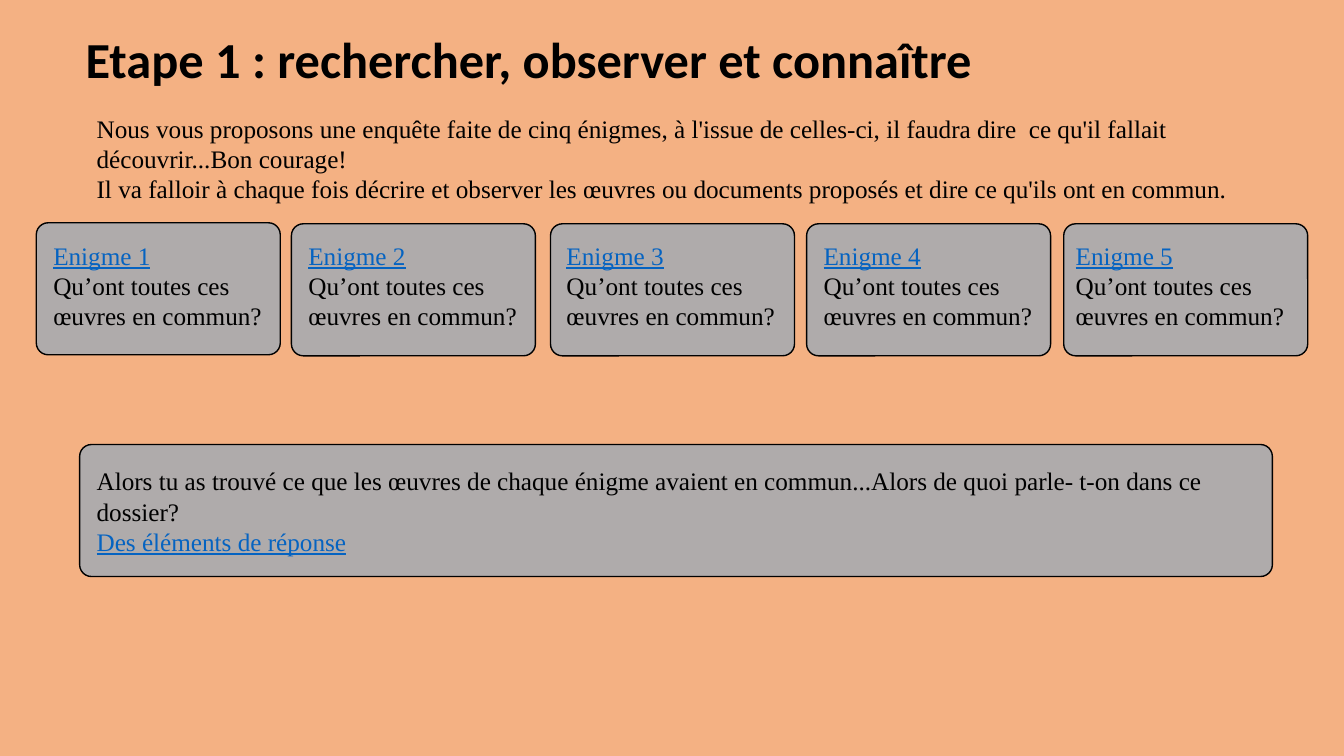
import pptx
import pptx.util
import pptx.dml.color
import pptx.enum.shapes
import pptx.enum.text

Inches = pptx.util.Inches
Pt = pptx.util.Pt


def color(code):
    return pptx.dml.color.RGBColor.from_string(code)


class Page:
    """Hold the style and the current slide, and add its elements."""

    ink = "000000"
    link = "0563C1"
    panel = "AFABAB"
    back = "F4B183"
    serif = "Times New Roman"
    sans = "Calibri"

    def __init__(self, deck):
        self.slide = deck.slides.add_slide(deck.slide_layouts[5])
        fill = self.slide.background.fill
        fill.solid()
        fill.fore_color.rgb = color(self.back)

    def run(self, para, text, size=18, face=serif, tint=ink, bold=False, under=False):
        run = para.add_run()
        run.text = text
        font = run.font
        font.name = face
        font.size = Pt(size)
        font.bold = bold
        font.underline = under
        font.color.rgb = color(tint)

    def title(self, text, left, top, width, height):
        shape = self.slide.shapes.title
        shape.left, shape.top = Inches(left), Inches(top)
        shape.width, shape.height = Inches(width), Inches(height)
        frame = shape.text_frame
        frame.word_wrap = True
        frame.auto_size = pptx.enum.text.MSO_AUTO_SIZE.NONE
        frame.vertical_anchor = pptx.enum.text.MSO_ANCHOR.MIDDLE
        para = frame.paragraphs[0]
        para.alignment = pptx.enum.text.PP_ALIGN.LEFT
        para.line_spacing = 0.9
        self.run(para, text, size=36, face=self.sans, bold=True)

    def card(self, left, top, width, height):
        shape = self.slide.shapes.add_shape(
            pptx.enum.shapes.MSO_SHAPE.ROUNDED_RECTANGLE,
            Inches(left), Inches(top), Inches(width), Inches(height))
        shape.adjustments[0] = 0.09
        shape.shadow.inherit = False
        shape.fill.solid()
        shape.fill.fore_color.rgb = color(self.panel)
        shape.line.color.rgb = color(self.ink)
        shape.line.width = Pt(1)

    def text(self, left, top, width, height):
        box = self.slide.shapes.add_textbox(
            Inches(left), Inches(top), Inches(width), Inches(height))
        frame = box.text_frame
        frame.word_wrap = True
        frame.auto_size = pptx.enum.text.MSO_AUTO_SIZE.SHAPE_TO_FIT_TEXT
        return frame

    def clue(self, label, left, top, width, height):
        frame = self.text(left, top, width, height)
        self.run(frame.paragraphs[0], label, tint=self.link, under=True)
        self.run(frame.add_paragraph(), "Qu’ont toutes ces œuvres en commun?")


def main():
    deck = pptx.Presentation()
    deck.slide_width = Inches(13.33)
    deck.slide_height = Inches(7.5)
    page = Page(deck)

    page.title("Etape 1 : rechercher, observer et connaître", 0.75, 0.16, 9.43, 0.91)

    intro = page.text(0.86, 1.07, 11.52, 1.01).paragraphs[0]
    page.run(intro, "Nous vous proposons une enquête faite de cinq énigmes, à l'issue "
             "de celles-ci, il faudra dire  ce qu'il fallait découvrir...Bon courage!")
    intro.add_line_break()
    page.run(intro, "Il va falloir à chaque fois décrire et observer les œuvres ou "
             "documents proposés et dire ce qu'ils ont en commun.")

    spots = [(0.36, 2.21, 0.43), (2.89, 2.22, 2.96), (5.46, 2.22, 5.52),
             (8, 2.22, 8.07), (10.55, 2.22, 10.57)]
    for rank, (left, top, inset) in enumerate(spots, 1):
        page.card(left, top, 2.42, 1.31)
        page.clue(f"Enigme {rank}", inset, 2.33, 2.35, 1.01)

    page.card(0.79, 4.41, 11.83, 1.31)
    answer = page.text(0.86, 4.57, 11.62, 1.01).paragraphs[0]
    page.run(answer, "Alors tu as trouvé ce que les œuvres de chaque énigme avaient en "
             "commun...Alors de quoi parle- t-on dans ce dossier?")
    answer.add_line_break()
    page.run(answer, "Des éléments de réponse", tint=page.link, under=True)

    deck.save("out.pptx")


if __name__ == "__main__":
    main()
